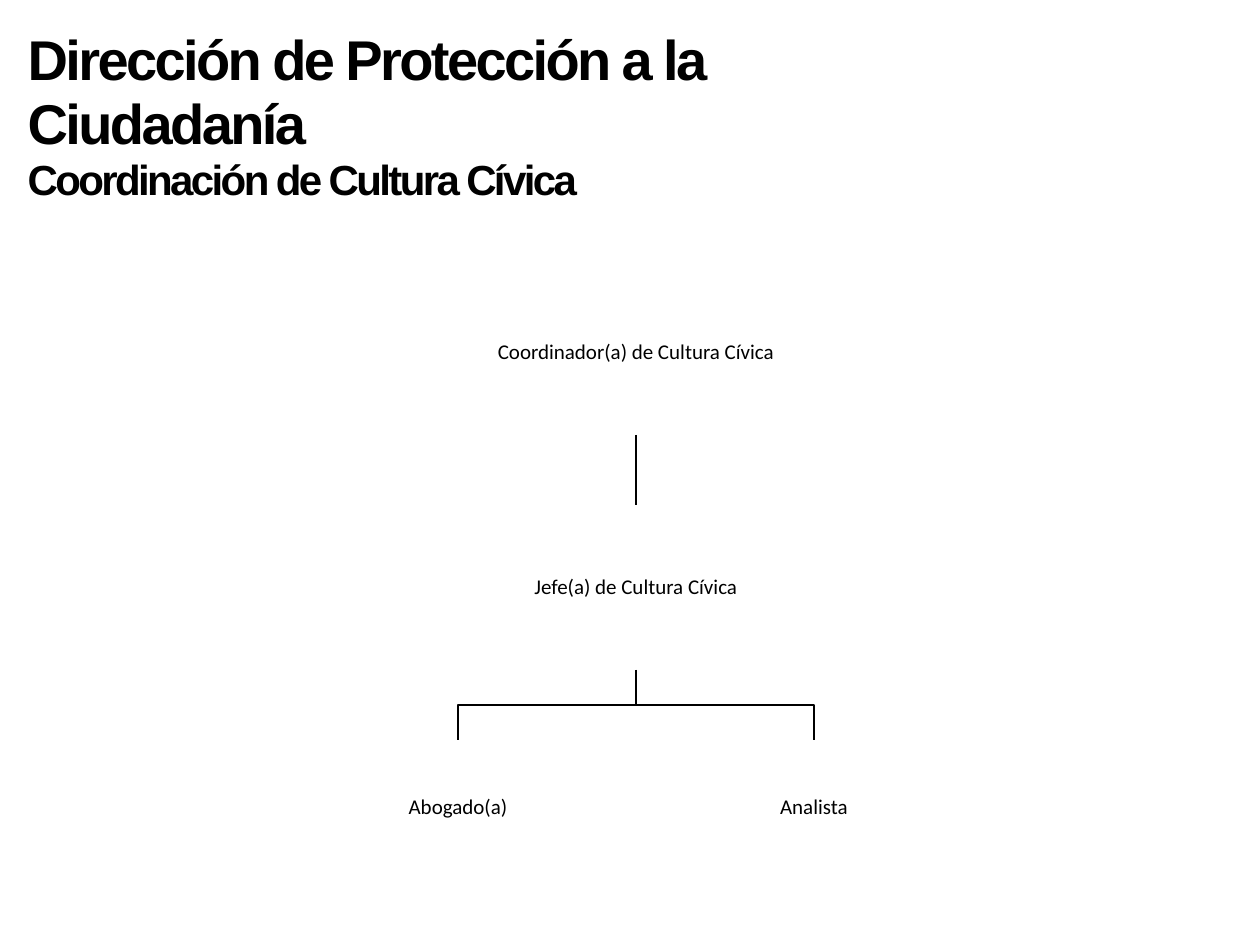
import pptx
import pptx.dml.color
import pptx.enum.shapes
import pptx.enum.text
import pptx.util
from lxml import etree

PX = 914400 // 126
INK = "000000"
PAPER = "FFFFFF"
BOTTOM, TOP = 2, 0
ALIGN = pptx.enum.text.PP_ALIGN
ANCHOR = pptx.enum.text.MSO_ANCHOR


def px(length):
    return pptx.util.Emu(length * PX)


def colour(value):
    return pptx.dml.color.RGBColor.from_string(value)


def apply(target, values):
    for name, value in values.items():
        setattr(target, name, value)


def add_span(para, text, **font):
    span = para.add_run()
    span.text = text
    apply(span.font, font)
    span.font.color.rgb = colour(INK)
    return span


def format_line(line):
    line.color.rgb = colour(INK)
    line.width = pptx.util.Pt(1)


def set_title(page, lines):
    title = page.shapes.title
    apply(title, dict(left=px(15), top=px(23), width=px(940), height=px(180)))
    frame = title.text_frame
    apply(frame, dict(word_wrap=True, vertical_anchor=ANCHOR.TOP,
                      auto_size=pptx.enum.text.MSO_AUTO_SIZE.SHAPE_TO_FIT_TEXT))
    for index, (text, size) in enumerate(lines):
        para = frame.add_paragraph() if index else frame.paragraphs[0]
        apply(para, dict(alignment=ALIGN.LEFT, line_spacing=0.95,
                         space_before=pptx.util.Pt(0)))
        span = add_span(para, text, name="Arial", bold=True,
                        size=pptx.util.Pt(size))
        span.font._element.set("spc", "-150")


def add_post(page, text, center, top, width, height, fill=PAPER):
    """One position in the chart, centred on a vertical axis."""
    box = page.shapes.add_shape(
        pptx.enum.shapes.MSO_SHAPE.RECTANGLE,
        px(center - width // 2), px(top), px(width), px(height))
    box.shadow.inherit = False
    box.line.fill.background()
    if fill:
        box.fill.solid()
        box.fill.fore_color.rgb = colour(fill)
    else:
        box.fill.background()
    frame = box.text_frame
    apply(frame, dict(word_wrap=True, vertical_anchor=ANCHOR.MIDDLE))
    apply(frame, {"margin_" + side: px(1)
                  for side in ("left", "top", "right", "bottom")})
    para = frame.paragraphs[0]
    apply(para, dict(alignment=ALIGN.CENTER, line_spacing=0.9))
    add_span(para, text, name="Calibri", size=pptx.util.Pt(12))
    return box


def join_straight(page, upper, lower):
    link = page.shapes.add_connector(
        pptx.enum.shapes.MSO_CONNECTOR.STRAIGHT, 0, 0, 0, 0)
    link.begin_connect(upper, BOTTOM)
    link.end_connect(lower, TOP)
    format_line(link.line)
    etree.SubElement(link._element.spPr, pptx.oxml.ns.qn("a:effectLst"))


def join_branch(page, start, end):
    (x1, y1), (x2, y2) = start, end
    middle = (y1 + y2) // 2
    builder = page.shapes.build_freeform(x1, y1, scale=PX)
    builder.add_line_segments([(x1, middle), (x2, middle), (x2, y2)],
                              close=False)
    branch = builder.convert_to_shape()
    branch.shadow.inherit = False
    branch.fill.background()
    format_line(branch.line)


def main():
    deck = pptx.Presentation()
    deck.slide_width = pptx.util.Inches(10)
    deck.slide_height = pptx.util.Inches(7.5)
    page = deck.slides.add_slide(deck.slide_layouts[5])

    # Heading
    set_title(page, [("Dirección de Protección a la Ciudadanía", 32),
                     ("Coordinación de Cultura Cívica", 24)])

    # Coordinator and head
    axis, spread = 636, 178
    head_bottom, staff_top = 670, 740
    coordinator = add_post(page, "Coordinador(a) de Cultura Cívica",
                           axis, 270, 332, 165, fill=None)
    head = add_post(page, "Jefe(a) de Cultura Cívica",
                    axis, 505, 302, head_bottom - 505)
    join_straight(page, coordinator, head)

    # Staff
    for text, center in (("Abogado(a)", axis - spread),
                         ("Analista", axis + spread)):
        add_post(page, text, center, staff_top, 284, 136)
        join_branch(page, (axis, head_bottom), (center, staff_top))

    deck.save("out.pptx")


if __name__ == "__main__":
    main()
